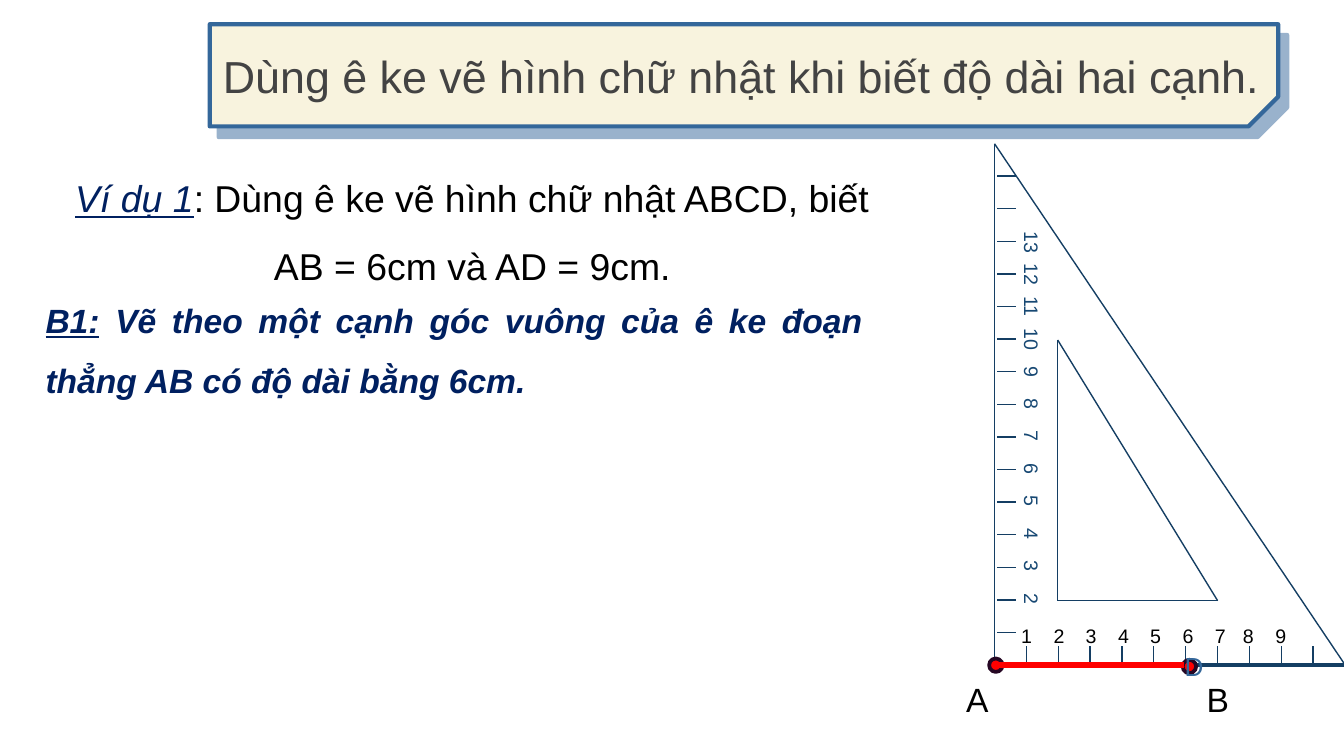
import pptx
import pptx.dml.color
import pptx.enum.shapes
import pptx.enum.text
import pptx.oxml
import pptx.oxml.ns
import pptx.util
from pptx.util import Inches

ALIGN = pptx.enum.text.PP_ALIGN
SHAPE = pptx.enum.shapes.MSO_SHAPE
NAMESPACE = pptx.oxml.ns.nsdecls("a")
INK = "143E63"
BLUE = "34679A"
NAVY = "002060"


def color(hex_string):
    return pptx.dml.color.RGBColor.from_string(hex_string)


def add_line(shapes, x1, y1, x2, y2, hex_string=INK, width=0.75):
    line = shapes.add_connector(
        pptx.enum.shapes.MSO_CONNECTOR.STRAIGHT,
        Inches(x1), Inches(y1), Inches(x2), Inches(y2))
    line.line.color.rgb = color(hex_string)
    line.line.width = pptx.util.Pt(width)
    line._element.spPr.append(pptx.oxml.parse_xml(f"<a:effectLst {NAMESPACE}/>"))


# 16:9 slide
presentation = pptx.Presentation()
presentation.slide_width = Inches(10)
presentation.slide_height = Inches(10 * 9 / 16)
slide = presentation.slides.add_slide(presentation.slide_layouts[6])

# Title banner: turned and mirrored so the cut corner is at bottom right
banner = slide.shapes.add_shape(
    SHAPE.SNIP_1_RECTANGLE, Inches(1.56), Inches(0.18), Inches(7.95), Inches(0.76))
banner.adjustments[0] = 0.29
banner.rotation = 180
banner._element.spPr.xfrm.set("flipH", "1")
banner.fill.solid()
banner.fill.fore_color.rgb = color("F8F3DE")
banner.line.color.rgb = color(BLUE)
banner.line.width = pptx.util.Pt(2.25)
banner._element.spPr.append(pptx.oxml.parse_xml(
    f'<a:effectLst {NAMESPACE}><a:outerShdw dist="95250" dir="3000000" '
    f'algn="bl" rotWithShape="0"><a:srgbClr val="{BLUE}">'
    '<a:alpha val="50000"/></a:srgbClr></a:outerShdw></a:effectLst>'))

# Set square
set_square = slide.shapes.add_group_shape().shapes
left, top, right, bottom = 7.4, 1.07, 10.01, 4.95
add_line(set_square, left, top, left, bottom)
add_line(set_square, left, bottom, right, bottom, width=2.25)
add_line(set_square, left, top, right, bottom)
add_line(set_square, 7.87, 2.53, 7.87, 4.47)
add_line(set_square, 7.87, 4.47, 9.06, 4.47)
add_line(set_square, 7.87, 2.53, 9.06, 4.47)

# Scale marks
for mark in range(1, 11):
    x = left + 2.37 * mark / 10
    add_line(set_square, x, bottom, x, 4.81)
for mark in range(1, 16):
    y = bottom - 3.64 * mark / 15
    add_line(set_square, 7.42, y, 7.56, y)

# Scale numbers, spaced with tab stops
bottom_stops = [0.24 * i for i in range(1, 7)] + [1.65, 1.89]
side_stops = [0.24 * i for i in range(1, 4)] + [1 + 1.69 * i / 7 for i in range(8)]
scales = [
    (range(1, 10), bottom_stops, (7.5, 4.59, 2.62, 0.29), 0, "000000"),
    (range(13, 1, -1), side_stops, (5.77, 3.39, 3.81, 0.28), 90, "174873"),
]
for numbers, stops, box, rotation, hex_string in scales:
    scale = set_square.add_textbox(*map(Inches, box))
    scale.rotation = rotation
    scale.text_frame.word_wrap = True
    paragraph = scale.text_frame.paragraphs[0]
    paragraph.text = "\t".join(str(number) for number in numbers)
    tabs = "".join(f'<a:tab pos="{Inches(stop)}" algn="l"/>' for stop in stops)
    paragraph._p.get_or_add_pPr().append(
        pptx.oxml.parse_xml(f"<a:tabLst {NAMESPACE}>{tabs}</a:tabLst>"))
    for run in paragraph.runs:
        run.font.name = "Arial"
        run.font.size = pptx.util.Pt(10.5)
        run.font.color.rgb = color(hex_string)

# End points and segment AB
for x, y, label in [(7.36, 4.9, ""), (8.8, 4.91, "D")]:
    point = slide.shapes.add_shape(
        SHAPE.OVAL, Inches(x), Inches(y), Inches(0.1), Inches(0.1))
    point.shadow.inherit = False
    point.fill.solid()
    point.fill.fore_color.rgb = color("FF0000")
    point.line.color.rgb = color("260724")
    point.line.width = pptx.util.Pt(2)
    if label:
        point.text_frame.text = label
        point.text_frame.vertical_anchor = pptx.enum.text.MSO_ANCHOR.MIDDLE
        paragraph = point.text_frame.paragraphs[0]
        paragraph.alignment = ALIGN.CENTER
        font = paragraph.runs[0].font
        font.name = "Arial"
        font.size = pptx.util.Pt(14)
        font.color.rgb = color(BLUE)
add_line(slide.shapes, 7.41, bottom, 8.81, bottom, "FF0000", 3)

# Texts: box, size, alignment, line spacing, runs (text, color, bold, italic, underline)
texts = [
    ((1.56, 0.18, 8.14, 0.96), 24, ALIGN.JUSTIFY, 1.2, [
        ("Dùng ê ke vẽ hình chữ nhật khi biết độ dài hai cạnh.",
         "434343", False, False, False)]),
    ((7.09, 5, 0.4, 0.4), 18, ALIGN.LEFT, 1, [("A", "000000", False, False, False)]),
    ((8.88, 5, 0.4, 0.4), 18, ALIGN.LEFT, 1, [("B", "000000", False, False, False)]),
    ((0.27, 1.09, 6.49, 1.11), 20, ALIGN.CENTER, 1.5, [
        ("Ví dụ 1", NAVY, False, True, True),
        (": Dùng ê ke vẽ hình chữ nhật ABCD, biết AB = 6cm và AD = 9cm.",
         "000000", False, False, False)]),
    ((0.24, 2.03, 6.28, 0.95), 18, ALIGN.JUSTIFY, 1.5, [
        ("B1:", NAVY, True, True, True),
        (" Vẽ theo một cạnh góc vuông của ê ke đoạn thẳng AB có độ dài bằng 6cm.",
         NAVY, True, True, False)]),
]
for box, size, alignment, spacing, runs in texts:
    text_box = slide.shapes.add_textbox(*map(Inches, box))
    text_frame = text_box.text_frame
    text_frame.word_wrap = True
    if size == 24:
        text_frame.margin_top = text_frame.margin_bottom = Inches(0.1)
    paragraph = text_frame.paragraphs[0]
    paragraph.alignment = alignment
    paragraph.line_spacing = spacing
    for text, hex_string, bold, italic, underline in runs:
        run = paragraph.add_run()
        run.text = text
        run.font.name = "Arial"
        run.font.size = pptx.util.Pt(size)
        run.font.color.rgb = color(hex_string)
        run.font.bold = bold
        run.font.italic = italic
        run.font.underline = underline

presentation.save("out.pptx")
